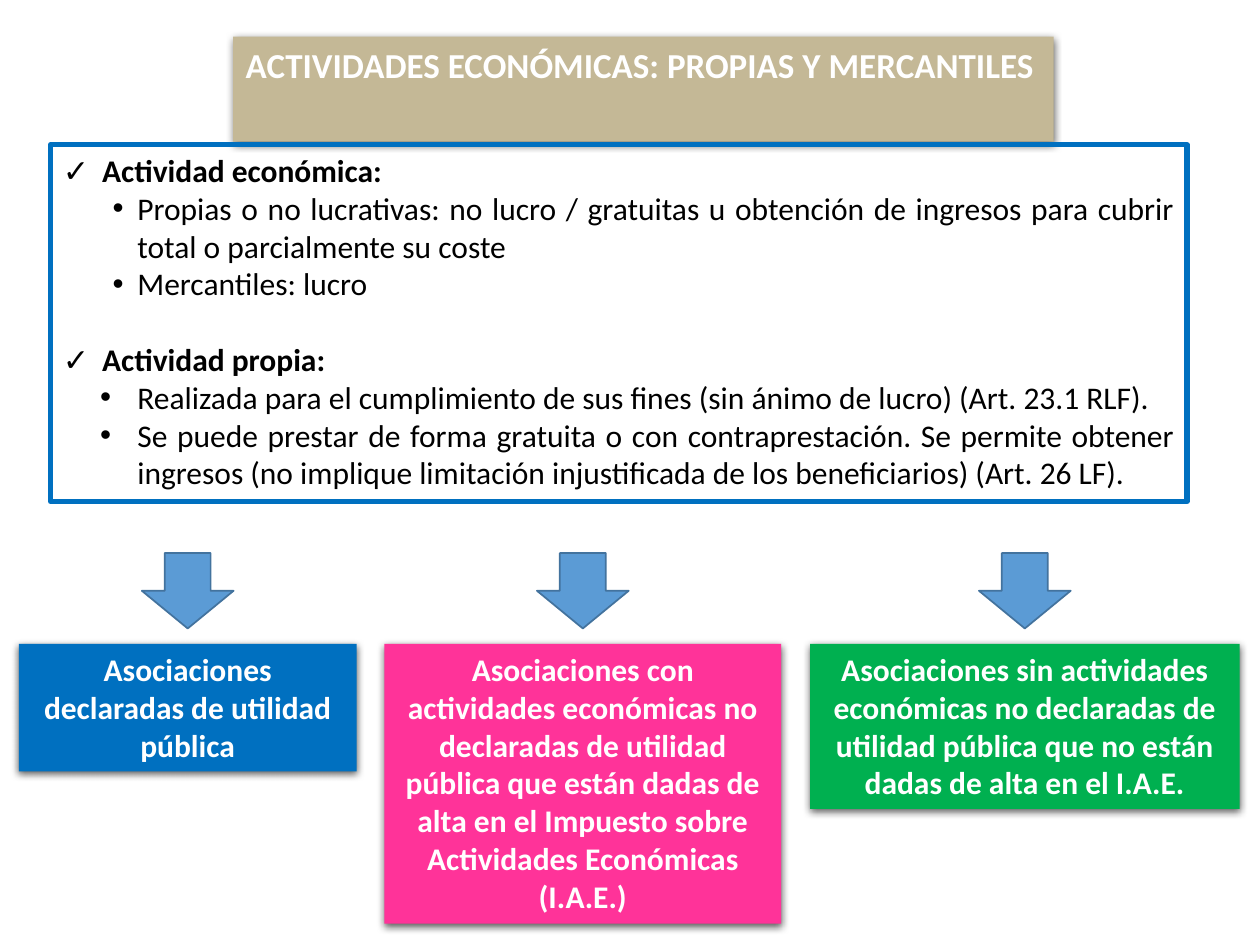
from lxml.etree import SubElement
from pptx import Presentation
from pptx.dml.color import RGBColor
from pptx.enum.shapes import MSO_SHAPE
from pptx.enum.text import MSO_ANCHOR, MSO_AUTO_SIZE, PP_ALIGN
from pptx.oxml.ns import qn
from pptx.util import Cm, Pt

COLORS = {
    "tan": "C4B896", "blue": "0070C0", "pink": "FF3399", "green": "00B050",
    "arrow": "5B9BD5", "edge": "43739E", "black": "000000", "white": "FFFFFF",
}
FONT = "Calibri"
CHECK = ("✓", "Segoe UI Symbol", 0.79, 0.79)
DOT = ("•", "Arial", 1.5, 0.5)
WIDE = ("•", "Arial", 1.5, 0.75)

POINTS = [
    ("Actividad económica:", CHECK, 0),
    ("Propias o no lucrativas: no lucro / gratuitas u obtención de ingresos "
     "para cubrir total o parcialmente su coste", DOT, 0),
    ("Mercantiles: lucro", DOT, 0),
    ("Actividad propia:", CHECK, 21.6),
    ("Realizada para el cumplimiento de sus fines (sin ánimo de lucro) "
     "(Art. 23.1 RLF).", WIDE, 0),
    ("Se puede prestar de forma gratuita o con contraprestación. Se permite "
     "obtener ingresos (no implique limitación injustificada de los "
     "beneficiarios) (Art. 26 LF).", WIDE, 0),
]
CASES = [
    (0.38, 6.81, 2.57, "blue", "Asociaciones declaradas de utilidad pública"),
    (7.75, 8, 5.64, "pink",
     "Asociaciones con actividades económicas no declaradas de utilidad "
     "pública que están dadas de alta en el Impuesto sobre Actividades "
     "Económicas (I.A.E.)"),
    (16.33, 8.66, 3.33, "green",
     "Asociaciones sin actividades económicas no declaradas de utilidad "
     "pública que no están dadas de alta en el I.A.E."),
]


def tint(name):
    return RGBColor.from_string(COLORS[name])


def paint(shape, fill=None, line=None, width=1):
    shape.shadow.inherit = False
    if fill:
        shape.fill.solid()
        shape.fill.fore_color.rgb = tint(fill)
    else:
        shape.fill.background()
    if line:
        shape.line.color.rgb = tint(line)
        shape.line.width = Pt(width)
    else:
        shape.line.fill.background()


def add_shade(shape):
    effects = shape._element.spPr.find(qn("a:effectLst"))
    shade = SubElement(effects, qn("a:outerShdw"), blurRad=str(Pt(4.5)),
                       dist=str(Pt(1.5)), dir="5400000", rotWithShape="0")
    color = SubElement(shade, qn("a:srgbClr"), val=COLORS["black"])
    SubElement(color, qn("a:alpha"), val="63000")


def set_frame(shape):
    frame = shape.text_frame
    frame.word_wrap = True
    frame.auto_size = MSO_AUTO_SIZE.SHAPE_TO_FIT_TEXT
    frame.vertical_anchor = MSO_ANCHOR.TOP
    return frame


def add_text(para, text, color, size=18, bold=True, align=PP_ALIGN.CENTER):
    para.alignment = align
    run = para.add_run()
    run.text = text
    run.font.name = FONT
    run.font.size = Pt(size)
    run.font.bold = bold
    run.font.color.rgb = tint(color)


def add_mark(para, mark):
    char, font, left, hang = mark
    props = para._p.get_or_add_pPr()
    props.set("marL", str(Cm(left)))
    props.set("indent", str(-Cm(hang)))
    SubElement(props, qn("a:buFont"), typeface=font)
    SubElement(props, qn("a:buChar"), char=char)


def add_block(slide, kind, left, top, width, height):
    return slide.shapes.add_shape(kind, Cm(left), Cm(top), Cm(width), Cm(height))


def set_title(slide):
    title = slide.shapes.title
    title.left, title.top = Cm(4.7), Cm(0.74)
    title.width, title.height = Cm(16.54), Cm(1.12)
    paint(title, "tan")
    add_shade(title)
    para = set_frame(title).paragraphs[0]
    add_text(para, "ACTIVIDADES ECONÓMICAS: PROPIAS Y MERCANTILES", "white",
             size=20, align=PP_ALIGN.LEFT)


def add_panel(slide):
    panel = add_block(slide, MSO_SHAPE.RECTANGLE, 1.02, 2.92, 22.91, 7.19)
    paint(panel, line="blue", width=3)
    frame = set_frame(panel)
    for i, (text, mark, gap) in enumerate(POINTS):
        para = frame.add_paragraph() if i else frame.paragraphs[0]
        para.space_before = Pt(gap)
        add_text(para, text, "black", bold=mark is CHECK, align=PP_ALIGN.JUSTIFY)
        add_mark(para, mark)


def add_case(slide, left, width, height, fill, text):
    span = 1.85
    arrow = add_block(slide, MSO_SHAPE.DOWN_ARROW,
                      left + (width - span) / 2, 11.15, span, 1.52)
    paint(arrow, "arrow", "edge")
    box = add_block(slide, MSO_SHAPE.RECTANGLE, left, 12.98, width, height)
    paint(box, fill)
    add_shade(box)
    add_text(set_frame(box).paragraphs[0], text, "white")


def main():
    deck = Presentation()
    deck.slide_width, deck.slide_height = Cm(25.4), Cm(19.05)
    slide = deck.slides.add_slide(deck.slide_layouts[5])
    set_title(slide)
    add_panel(slide)
    for case in CASES:
        add_case(slide, *case)
    deck.save("out.pptx")


if __name__ == "__main__":
    main()
